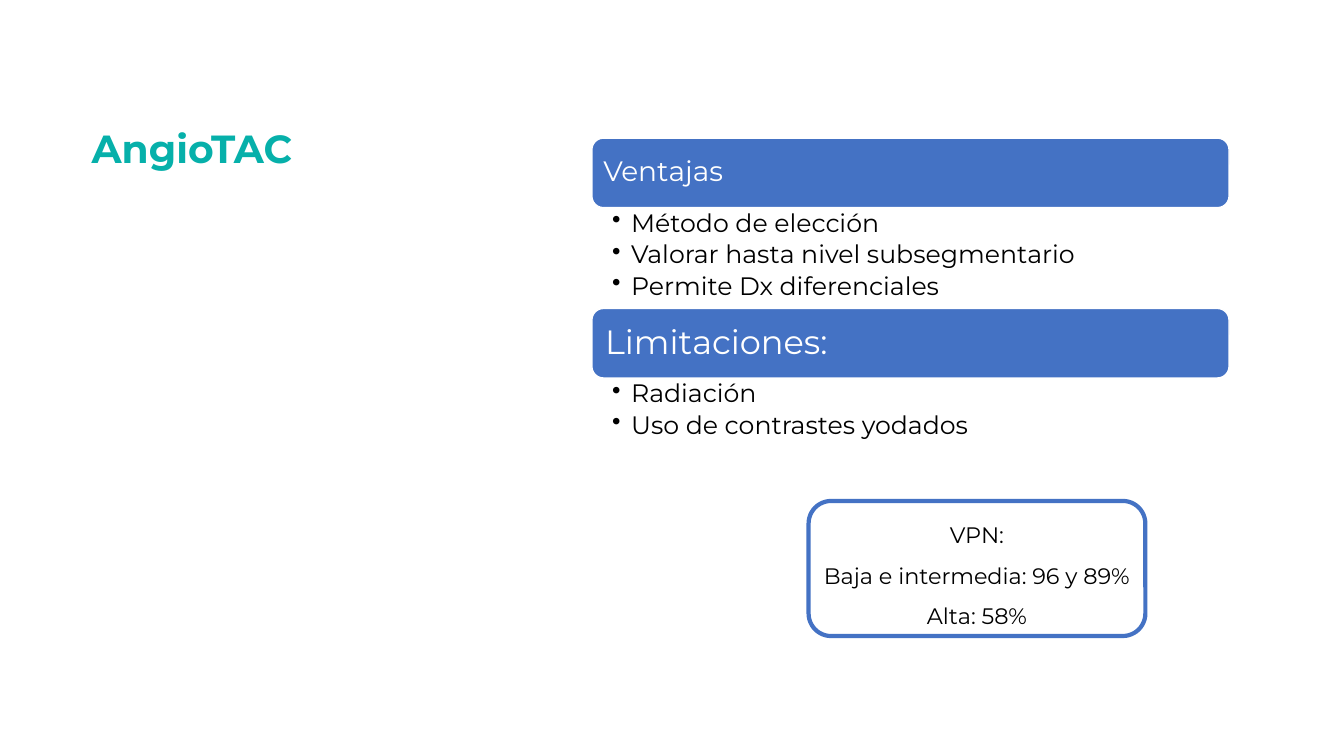
from lxml import etree
from pptx import Presentation
from pptx import util as u
from pptx.dml.color import RGBColor
from pptx.enum import shapes, text
from pptx.oxml.ns import qn

COLORS = {"teal": "06B0AA", "blue": "4472C4", "white": "FFFFFF", "black": "000000"}
LEFT, WIDTH, HEADER_HEIGHT = 5.87, 6.32, 0.69
SECTIONS = [
    ("Ventajas", 20, 0.08, 1.37, 1.0,
     ["Método de elección", "Valorar hasta nivel subsegmentario", "Permite Dx diferenciales"]),
    ("Limitaciones:", 24, 0.1, 3.06, 0.78,
     ["Radiación", "Uso de contrastes yodados"]),
]


def style_text(frame, size, color, spacing, insets, anchor):
    """Set the frame's insets (left, top, right, bottom) and its paragraphs' font."""
    frame.word_wrap = True
    frame.vertical_anchor = anchor
    frame.margin_left, frame.margin_top, frame.margin_right, frame.margin_bottom = map(u.Inches, insets)
    for para in frame.paragraphs:
        para.line_spacing = spacing
        para.font.size = u.Pt(size)
        para.font.name = "Montserrat"
        para.font.color.rgb = RGBColor.from_string(COLORS[color])


def add_round_box(slide, left, top, width, height, fill, line, line_width):
    box = slide.shapes.add_shape(shapes.MSO_SHAPE.ROUNDED_RECTANGLE,
                                 u.Inches(left), u.Inches(top), u.Inches(width), u.Inches(height))
    box.shadow.inherit = False
    box.fill.solid()
    box.fill.fore_color.rgb = RGBColor.from_string(COLORS[fill])
    box.line.color.rgb = RGBColor.from_string(COLORS[line])
    box.line.width = u.Pt(line_width)
    return box


deck = Presentation()
deck.slide_width, deck.slide_height = u.Inches(13.33), u.Inches(7.5)
slide = deck.slides.add_slide(deck.slide_layouts[5])

title = slide.shapes.title
title.left, title.top, title.width, title.height = map(u.Inches, (0.81, 0.96, 11.88, 1.07))
title.text_frame.text = "AngioTAC"
style_text(title.text_frame, 28, "teal", 0.9, (0.1, 0.05, 0.1, 0.05), text.MSO_ANCHOR.MIDDLE)
title.text_frame.paragraphs[0].alignment = text.PP_ALIGN.LEFT
title.text_frame.paragraphs[0].font.bold = True

for heading, size, inset, top, list_height, items in SECTIONS:
    header = add_round_box(slide, LEFT, top, WIDTH, HEADER_HEIGHT, "blue", "white", 1)
    header.text_frame.text = heading
    style_text(header.text_frame, size, "white", 0.9, [inset] * 4, text.MSO_ANCHOR.MIDDLE)
    header.text_frame.paragraphs[0].alignment = text.PP_ALIGN.LEFT

    points = slide.shapes.add_textbox(u.Inches(LEFT), u.Inches(top + HEADER_HEIGHT),
                                      u.Inches(WIDTH), u.Inches(list_height))
    points.text_frame.text = "\n".join(items)
    for para in points.text_frame.paragraphs:
        para.level = 1
        para.space_after = u.Pt(3)
        properties = para._p.get_or_add_pPr()
        properties.set("marL", str(u.Inches(0.19)))
        properties.set("indent", str(-u.Inches(0.19)))
        etree.SubElement(properties, qn("a:buChar"), char="•")
    style_text(points.text_frame, 18, "black", 0.9, (0.2, 0.03, 0.14, 0.03), text.MSO_ANCHOR.TOP)

predictive_value = add_round_box(slide, 8.02, 4.97, 3.34, 1.34, "white", "blue", 3)
predictive_value.text_frame.text = "VPN:\nBaja e intermedia: 96 y 89%\nAlta: 58%"
style_text(predictive_value.text_frame, 16, "black", 1.5, [0] * 4, text.MSO_ANCHOR.MIDDLE)
for para in predictive_value.text_frame.paragraphs:
    para.alignment = text.PP_ALIGN.CENTER

deck.save("out.pptx")
